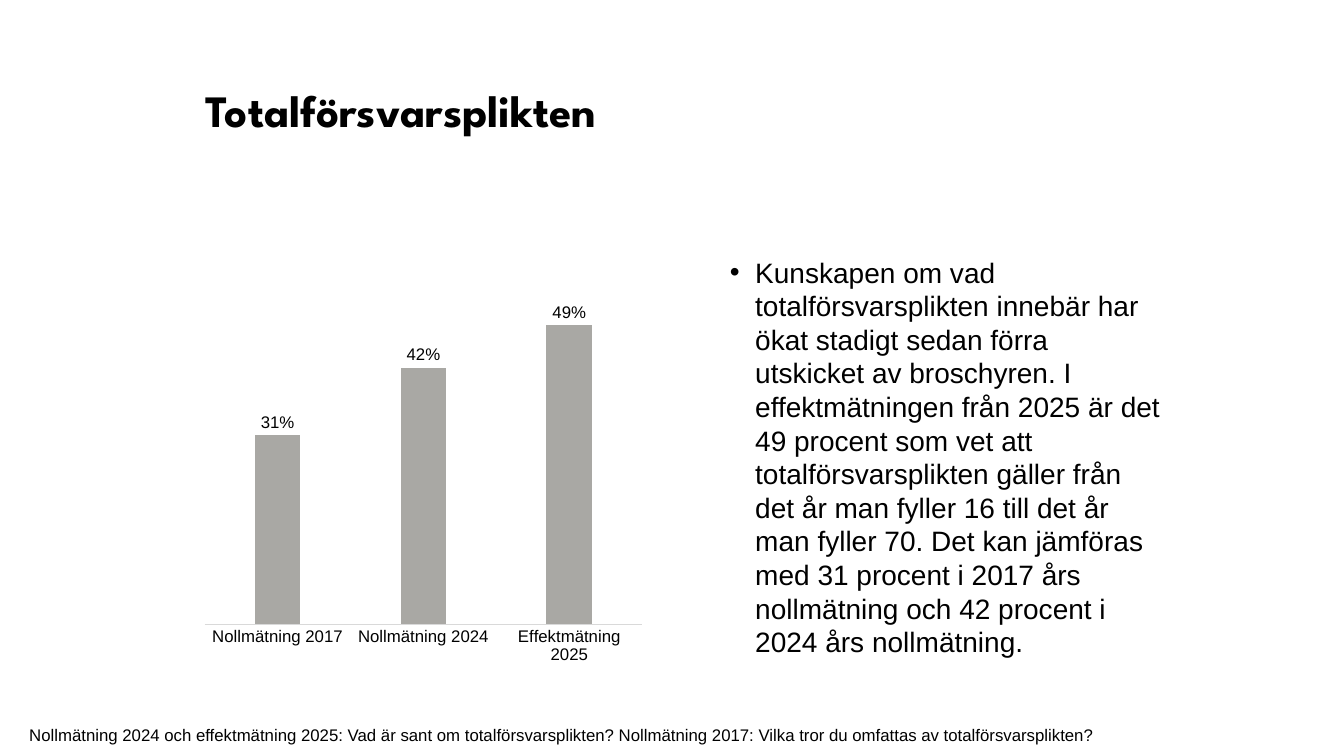
from lxml import etree
from pptx import Presentation
from pptx.chart.data import CategoryChartData
from pptx.dml.color import RGBColor
from pptx.enum.chart import XL_CHART_TYPE, XL_LABEL_POSITION, XL_TICK_LABEL_POSITION, XL_TICK_MARK
from pptx.enum.text import MSO_ANCHOR, MSO_AUTO_SIZE, PP_ALIGN
from pptx.oxml.ns import qn
from pptx.util import Inches, Pt

COLUMNS = XL_CHART_TYPE.COLUMN_CLUSTERED
OUTSIDE_END = XL_LABEL_POSITION.OUTSIDE_END
NEXT_TO_AXIS = XL_TICK_LABEL_POSITION.NEXT_TO_AXIS
NO_TICK = XL_TICK_MARK.NONE
TOP = MSO_ANCHOR.TOP
NO_AUTOFIT = MSO_AUTO_SIZE.NONE
GROW = MSO_AUTO_SIZE.SHAPE_TO_FIT_TEXT
LEFT = PP_ALIGN.LEFT

BLACK, BAR_GREY, AXIS_GREY = "000000", "A9A8A4", "D9D9D9"
BODY_FONT, TITLE_FONT = "Arial", "League Spartan"


def color(hex_value):
    return RGBColor.from_string(hex_value)


def set_font(font, size, name=BODY_FONT, bold=False):
    font.size = Pt(size)
    font.name = name
    font.bold = bold
    font.color.rgb = color(BLACK)


class SlideBuilder:
    def __init__(self, slide):
        self.slide = slide

    def place(self, shape, box):
        shape.left, shape.top, shape.width, shape.height = map(Inches, box)

    def fill_placeholder(self, shape, box, text):
        self.place(shape, box)
        frame = shape.text_frame
        frame.text = text
        frame.word_wrap = True
        frame.auto_size = NO_AUTOFIT
        frame.vertical_anchor = TOP
        paragraph = frame.paragraphs[0]
        paragraph.alignment = LEFT
        paragraph.space_before = Pt(0)
        return paragraph

    def title(self, box, text):
        paragraph = self.fill_placeholder(self.slide.shapes.title, box, text)
        paragraph.line_spacing = 0.9
        set_font(paragraph.font, 32, TITLE_FONT, bold=True)

    def bullet(self, box, text):
        paragraph = self.fill_placeholder(self.slide.placeholders[1], box, text)
        paragraph.line_spacing = 1.0
        properties = paragraph._p.get_or_add_pPr()
        properties.set("marL", str(Inches(0.25)))
        properties.set("indent", str(-Inches(0.25)))
        etree.SubElement(properties, qn("a:buFont")).set("typeface", BODY_FONT)
        etree.SubElement(properties, qn("a:buChar")).set("char", "•")
        set_font(paragraph.font, 20)

    def column_chart(self, box, series_name, values):
        data = CategoryChartData(number_format="0%")
        data.categories = list(values)
        data.add_series(series_name, list(values.values()))
        chart = self.slide.shapes.add_chart(COLUMNS, *map(Inches, box), data).chart
        chart.has_legend = chart.has_title = False
        set_font(chart.font, 10)

        # Axes
        category_axis, value_axis = chart.category_axis, chart.value_axis
        category_axis.major_tick_mark = category_axis.minor_tick_mark = NO_TICK
        category_axis.tick_label_position = NEXT_TO_AXIS
        category_axis.format.line.color.rgb = color(AXIS_GREY)
        category_axis.format.line.width = Pt(0.75)
        set_font(category_axis.tick_labels.font, 12)
        value_axis.visible = False
        value_axis.has_major_gridlines = False
        value_axis.major_tick_mark = value_axis.minor_tick_mark = NO_TICK
        value_axis.minimum_scale, value_axis.maximum_scale = 0, 0.6

        # Columns and their labels
        plot = chart.plots[0]
        plot.vary_by_categories = False
        plot.gap_width, plot.overlap = 219, -27
        series = plot.series[0]
        series.format.fill.solid()
        series.format.fill.fore_color.rgb = color(BAR_GREY)
        labels = series.data_labels
        labels.show_value = True
        labels.position = OUTSIDE_END
        labels.number_format = "0%"
        labels.number_format_is_linked = False
        set_font(labels.font, 12)

    def note(self, box, text):
        frame = self.slide.shapes.add_textbox(*map(Inches, box)).text_frame
        frame.margin_left = frame.margin_right = frame.margin_top = frame.margin_bottom = 0
        frame.word_wrap = True
        frame.auto_size = GROW
        frame.text = text
        set_font(frame.paragraphs[0].font, 12)


def main():
    presentation = Presentation()
    presentation.slide_width, presentation.slide_height = Inches(13.33), Inches(7.5)
    builder = SlideBuilder(presentation.slides.add_slide(presentation.slide_layouts[1]))

    # Heading and finding
    builder.title((1.94, 0.83, 9.38, 1.06), "Totalförsvarsplikten")
    builder.bullet(
        (7.14, 2.48, 4.5, 3.86),
        "Kunskapen om vad totalförsvarsplikten innebär har ökat stadigt sedan förra "
        "utskicket av broschyren. I effektmätningen från 2025 är det 49 procent som vet "
        "att totalförsvarsplikten gäller från det år man fyller 16 till det år man fyller "
        "70. Det kan jämföras med 31 procent i 2017 års nollmätning och 42 procent i 2024 "
        "års nollmätning.",
    )

    # Survey results
    builder.column_chart(
        (1.94, 2.48, 4.52, 4.19),
        "Series 1",
        {"Nollmätning 2017": 0.31, "Nollmätning 2024": 0.42, "Effektmätning 2025": 0.49},
    )

    # Survey questions
    builder.note(
        (0.29, 7.19, 10.84, 0.2),
        "Nollmätning 2024 och effektmätning 2025: Vad är sant om totalförsvarsplikten? "
        "Nollmätning 2017: Vilka tror du omfattas av totalförsvarsplikten?",
    )
    presentation.save("out.pptx")


if __name__ == "__main__":
    main()
